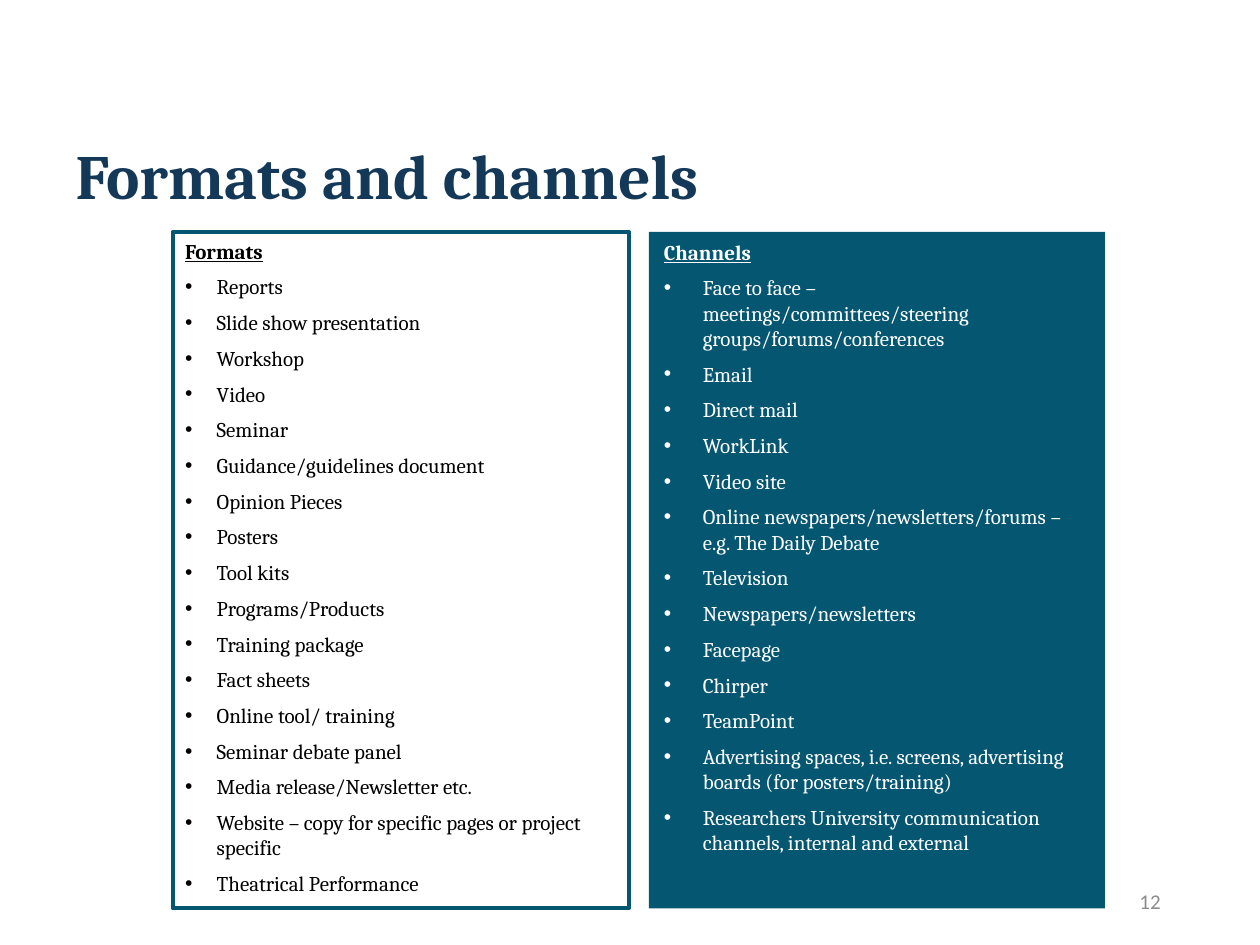
from lxml.etree import SubElement
from pptx import Presentation
from pptx.dml.color import RGBColor
from pptx.enum.shapes import MSO_SHAPE
from pptx.enum.text import MSO_ANCHOR as ANCHOR, MSO_AUTO_SIZE as AUTO, PP_ALIGN as ALIGN
from pptx.oxml.ns import qn
from pptx.util import Inches, Pt

COLORS = {"teal": "055671", "navy": "143858", "black": "000000",
          "white": "FFFFFF", "grey": "8C8C8C"}

FORMATS = [
    "Reports", "Slide show presentation", "Workshop", "Video", "Seminar",
    "Guidance/guidelines document", "Opinion Pieces", "Posters", "Tool kits",
    "Programs/Products", "Training package", "Fact sheets",
    "Online tool/ training", "Seminar debate panel",
    "Media release/Newsletter etc.",
    "Website – copy for specific pages or project specific",
    "Theatrical Performance",
]
CHANNELS = [
    "Face to face – meetings/committees/steering groups/forums/conferences",
    "Email", "Direct mail", "WorkLink", "Video site",
    "Online newspapers/newsletters/forums – e.g. The Daily Debate",
    "Television", "Newspapers/newsletters", "Facepage", "Chirper", "TeamPoint",
    "Advertising spaces, i.e. screens, advertising boards (for posters/training)",
    "Researchers University communication channels, internal and external",
]


def color(name):
    return RGBColor.from_string(COLORS[name])


def place(sp, left, top, width, height):
    box = {"left": left, "top": top, "width": width, "height": height}
    for name, value in box.items():
        setattr(sp, name, Inches(value))


def format_font(font, color_name, **values):
    for name, value in values.items():
        setattr(font, name, value)
    font.color.rgb = color(color_name)


def set_bullet(p, indent):
    """Give the paragraph a hanging bullet, or none when indent is 0."""
    pPr = p._p.get_or_add_pPr()
    pPr.set("marL", str(Inches(indent)))
    pPr.set("indent", str(-Inches(indent)))
    if indent:
        SubElement(pPr, qn("a:buFont"), typeface="Arial")
        SubElement(pPr, qn("a:buChar"), char="•")
    else:
        SubElement(pPr, qn("a:buNone"))


def fill_list(sp, heading, items, indent, color_name):
    tf = sp.text_frame
    settings = {"word_wrap": True, "auto_size": AUTO.NONE, "vertical_anchor": ANCHOR.TOP}
    for name, value in settings.items():
        setattr(tf, name, value)
    for i, text in enumerate([heading, *items]):
        is_heading = i == 0
        p = tf.paragraphs[0] if is_heading else tf.add_paragraph()
        set_bullet(p, 0 if is_heading else indent)
        p.alignment = ALIGN.LEFT
        p.space_before = Pt(0 if is_heading else 6)
        r = p.add_run()
        r.text = text
        format_font(r.font, color_name, name="Cambria", size=Pt(12),
                    bold=is_heading, underline=is_heading)


def add_panel(slide, *box):
    sp = slide.shapes.add_shape(MSO_SHAPE.RECTANGLE, *map(Inches, box))
    sp.shadow.inherit = False
    sp.fill.solid()
    sp.fill.fore_color.rgb = color("teal")
    sp.line.fill.background()
    return sp


def set_title(sp, text):
    place(sp, 0.5, 0.8, 9, 1.25)
    tf = sp.text_frame
    tf.vertical_anchor = ANCHOR.MIDDLE
    p = tf.paragraphs[0]
    p.alignment = ALIGN.LEFT
    p.line_spacing = 0.9
    r = p.add_run()
    r.text = text
    format_font(r.font, "navy", name="Cambria", size=Pt(36), bold=True)


def add_page_number(slide, number):
    sp = slide.shapes.add_textbox(*map(Inches, (7.06, 6.95, 2.25, 0.4)))
    tf = sp.text_frame
    tf.word_wrap = True
    tf.vertical_anchor = ANCHOR.MIDDLE
    p = tf.paragraphs[0]
    p.alignment = ALIGN.RIGHT
    r = p.add_run()
    r.text = number
    format_font(r.font, "grey", name="Calibri", size=Pt(12))


def main():
    prs = Presentation()
    prs.slide_width, prs.slide_height = Inches(10), Inches(7.5)
    slide = prs.slides.add_slide(prs.slide_layouts[1])
    set_title(slide.shapes.title, "Formats and channels")

    formats = slide.placeholders[1]
    place(formats, 1.37, 1.84, 3.62, 5.37)
    formats.line.color.rgb = color("teal")
    formats.line.width = Pt(2.25)
    fill_list(formats, "Formats", FORMATS, 0.25, "black")

    add_panel(slide, 5.15, 1.84, 3.62, 5.37)
    channels = add_panel(slide, 5.17, 1.85, 3.52, 5.03)
    fill_list(channels, "Channels", CHANNELS, 0.31, "white")

    add_page_number(slide, "12")
    prs.save("out.pptx")


if __name__ == "__main__":
    main()
